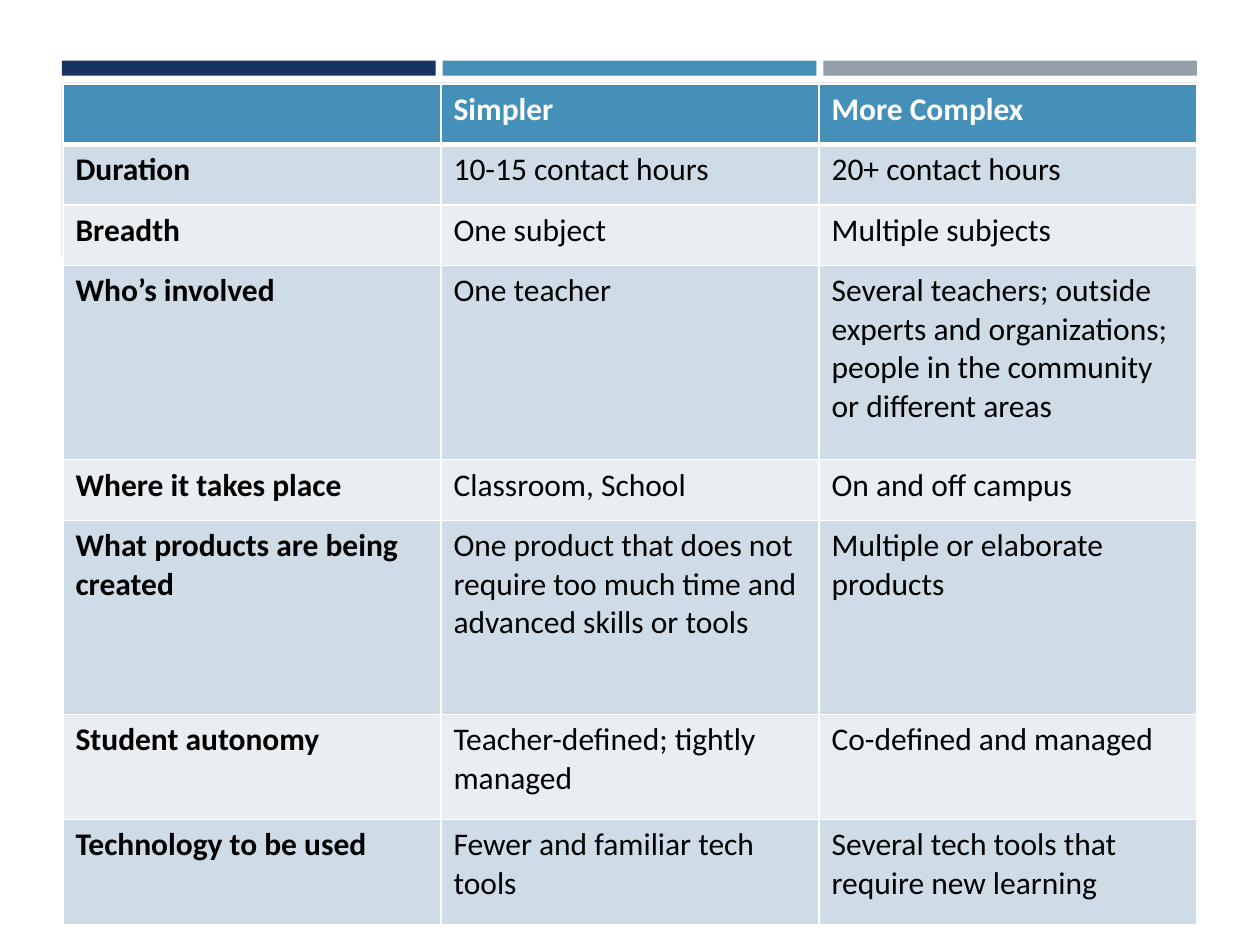
import dataclasses

import lxml.etree
import pptx
import pptx.dml.color
import pptx.enum.shapes
import pptx.oxml.ns
import pptx.util

Pt = pptx.util.Pt


@dataclasses.dataclass(frozen=True)
class Theme:
    navy: str = "1A3260"
    blue: str = "4590B8"
    gray: str = "969FA7"
    band_dark: str = "CFDBE6"
    band_light: str = "E9EEF3"
    white: str = "FFFFFF"
    black: str = "000000"
    font: str = "Calibri"
    text_size: float = 18
    rule: float = 1
    header_rule: float = 3


THEME = Theme()

CRITERIA = [
    ("", "Simpler", "More Complex"),
    ("Duration", "10-15 contact hours", "20+ contact hours"),
    ("Breadth", "One subject", "Multiple subjects"),
    ("Who’s involved", "One teacher",
     "Several teachers; outside experts and organizations; "
     "people in the community or different areas"),
    ("Where it takes place", "Classroom, School", "On and off campus"),
    ("What products are being created",
     "One product that does not require too much time and advanced skills or tools",
     "Multiple or elaborate products"),
    ("Student autonomy", "Teacher-defined; tightly managed", "Co-defined and managed"),
    ("Technology to be used", "Fewer and familiar tech tools",
     "Several tech tools that require new learning"),
]
ROW_HEIGHTS = [34.6, 34.6, 34.6, 111, 34.6, 111, 60, 60]


def rgb(color):
    return pptx.dml.color.RGBColor.from_string(color)


def add_block(slide, left, top, width, height, color):
    block = slide.shapes.add_shape(
        pptx.enum.shapes.MSO_SHAPE.RECTANGLE, Pt(left), Pt(top), Pt(width), Pt(height))
    block.shadow.inherit = False
    block.fill.solid()
    block.fill.fore_color.rgb = rgb(color)
    block.line.fill.background()


def add_header_band(slide, left, top, width):
    gap, bar_height = 4, 8.6
    bar_width = (width - 2 * gap) / 3
    for index, color in enumerate((THEME.navy, THEME.blue, THEME.gray)):
        add_block(slide, left + index * (bar_width + gap), top, bar_width, bar_height, color)
    add_block(slide, left, top + 12.7, width, 99.4, THEME.navy)


def set_border(cell, side, weight):
    qn = pptx.oxml.ns.qn
    properties = cell._tc.get_or_add_tcPr()
    line = lxml.etree.SubElement(properties, qn(f"a:ln{side}"), w=str(Pt(weight)))
    fill = lxml.etree.SubElement(line, qn("a:solidFill"))
    lxml.etree.SubElement(fill, qn("a:srgbClr"), val=THEME.white)


def format_cell(cell, text, row, column):
    is_header = row == 0
    weights = {
        "L": THEME.rule,
        "R": THEME.rule,
        "T": THEME.header_rule if row == 1 else THEME.rule,
        "B": THEME.header_rule if is_header else THEME.rule,
    }
    for side, weight in weights.items():
        set_border(cell, side, weight)
    band = THEME.band_dark if row % 2 else THEME.band_light
    cell.fill.solid()
    cell.fill.fore_color.rgb = rgb(THEME.blue if is_header else band)
    cell.text = text
    font = cell.text_frame.paragraphs[0].font
    font.name = THEME.font
    font.size = Pt(THEME.text_size)
    font.bold = is_header or column == 0
    font.color.rgb = rgb(THEME.white if is_header else THEME.black)


def add_criteria_table(slide, left, top, width):
    column_count = len(CRITERIA[0])
    table = slide.shapes.add_table(
        len(CRITERIA), column_count,
        Pt(left), Pt(top), Pt(width), Pt(sum(ROW_HEIGHTS))).table
    for column in table.columns:
        column.width = Pt(width / column_count)
    for row, (height, texts) in enumerate(zip(ROW_HEIGHTS, CRITERIA)):
        table.rows[row].height = Pt(height)
        for column, text in enumerate(texts):
            format_cell(table.cell(row, column), text, row, column)


def main():
    presentation = pptx.Presentation()
    presentation.slide_width = Pt(720)
    presentation.slide_height = Pt(540)
    slide = presentation.slides.add_slide(presentation.slide_layouts[6])
    add_header_band(slide, 35.4, 34.7, 648.6)
    add_criteria_table(slide, 36, 48, 648)
    presentation.save("out.pptx")


if __name__ == "__main__":
    main()
